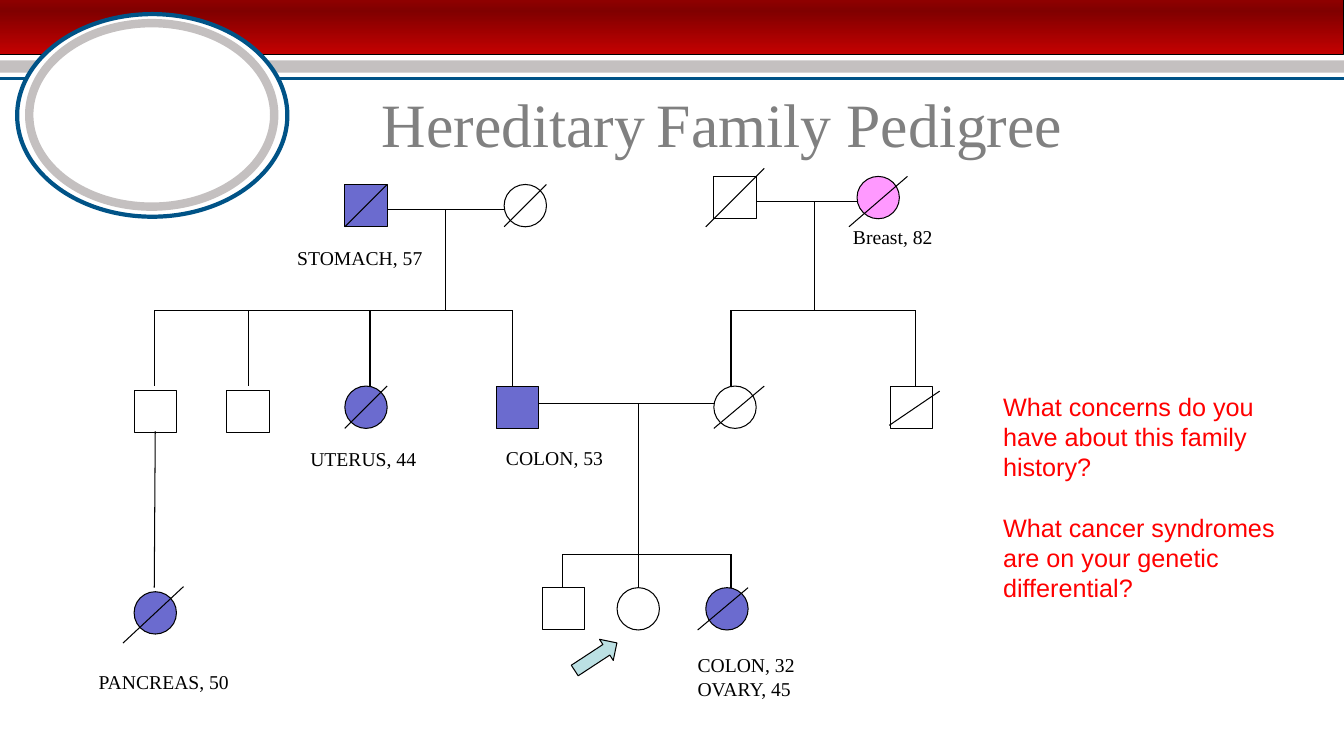
from copy import deepcopy
from itertools import pairwise

from pptx import Presentation
from pptx.dml.color import RGBColor
from pptx.enum.shapes import MSO_CONNECTOR, MSO_SHAPE
from pptx.enum.text import MSO_ANCHOR, PP_ALIGN
from pptx.oxml.ns import qn
from pptx.util import Inches, Pt

RECT = MSO_SHAPE.RECTANGLE
OVAL = MSO_SHAPE.OVAL
ARROW = MSO_SHAPE.RIGHT_ARROW
STRAIGHT = MSO_CONNECTOR.STRAIGHT
TOP = MSO_ANCHOR.TOP
LEFT, CENTER = PP_ALIGN.LEFT, PP_ALIGN.CENTER

SERIF, SANS = "Times New Roman", "Arial"
BLACK, WHITE, RED = "000000", "FFFFFF", "FF0000"
AFFECTED, BREAST = "6B6BCF", "FF99FF"
NAVY, SILVER = "005387", "C4C0C0"
SYMBOL = 0.42

MEMBERS = [
    # shape, left, top, fill, strike, label lines, label box, alignment
    (RECT, 2.42, 0.33, AFFECTED, (0, 0.42, 0.42, 0),
     ["STOMACH, 57"], (-0.57, 0.56, 2, 0.34), LEFT),
    (OVAL, 4, 0.33, None, (0, 0.42, 0.42, 0), [], None, LEFT),
    (RECT, 6.08, 0.25, WHITE, (-0.08, 0.5, 0.5, -0.08), [], None, LEFT),
    (OVAL, 7.5, 0.25, BREAST, (-0.08, 0.5, 0.5, 0),
     ["Breast, 82"], (-0.17, 0.43, 1.05, 0.34), CENTER),
    (RECT, 0.33, 2.37, None, None, [], None, LEFT),
    (RECT, 1.25, 2.37, None, None, [], None, LEFT),
    (OVAL, 2.42, 2.33, AFFECTED, (0, 0.42, 0.42, 0),
     ["UTERUS, 44"], (-0.44, 0.55, 1.43, 0.34), LEFT),
    (RECT, 3.92, 2.33, AFFECTED, None,
     ["COLON, 53"], (0, 0.54, 1.17, 0.34), LEFT),
    (OVAL, 6.08, 2.33, WHITE, (0, 0.42, 0.5, 0), [], None, LEFT),
    (RECT, 7.83, 2.33, None, (-0.01, 0.39, 0.49, 0.05), [], None, LEFT),
    (OVAL, 0.33, 4.37, AFFECTED, (-0.11, 0.51, 0.49, -0.05),
     ["PANCREAS, 50"], (-0.45, 0.73, 1.67, 0.34), LEFT),
    (RECT, 4.38, 4.33, None, None, [], None, LEFT),
    (OVAL, 5.12, 4.33, None, None, [], None, LEFT),
    (OVAL, 6, 4.33, AFFECTED, (-0.08, 0.42, 0.42, 0),
     ["COLON, 32", "OVARY, 45"], (-0.18, 0.6, 1.75, 0.57), LEFT),
]

FAMILIES = [
    ((2.83, 4), 0.58, 3.42, 1.58, (0.53, 1.46, 2.67, 4.08), 2.33),
    ((6.5, 7.5), 0.5, 7.08, 1.58, (6.25, 8.08), 2.33),
    ((4.33, 6.08), 2.5, 5.33, 4, (4.58, 5.33, 6.25), 4.33),
]


def rgb(color):
    return RGBColor.from_string(color)


def add_figure(slide, kind, box, fill, outline=BLACK, weight=0.75):
    figure = slide.shapes.add_shape(kind, *map(Inches, box))
    figure.shadow.inherit = False
    if fill:
        figure.fill.solid()
        figure.fill.fore_color.rgb = rgb(fill)
    else:
        figure.fill.background()
    if outline:
        figure.line.color.rgb = rgb(outline)
        figure.line.width = Pt(weight)
    else:
        figure.line.fill.background()
    return figure


def add_line(slide, x1, y1, x2, y2, color=BLACK, weight=0.75):
    line = slide.shapes.add_connector(STRAIGHT, *map(Inches, (x1, y1, x2, y2)))
    line.line.color.rgb = rgb(color)
    line.line.width = Pt(weight)
    properties = line._element.spPr
    properties.append(properties.makeelement(qn("a:effectLst"), {}))


def add_text(slide, box, lines, size, font, color, align=LEFT, gap=0):
    frame = slide.shapes.add_textbox(*map(Inches, box)).text_frame
    frame.word_wrap = True
    frame.text = "\n".join(lines)
    for index, paragraph in enumerate(frame.paragraphs):
        paragraph.alignment = align
        paragraph.space_before = Pt(gap if index else 0)
        paragraph.font.size = Pt(size)
        paragraph.font.name = font
        paragraph.font.color.rgb = rgb(color)


def add_banner(slide, left, top, width):
    band = add_figure(slide, RECT, (left, top - 0.34, width, 0.88), "C40101")
    band.fill.gradient()
    band.fill.gradient_angle = 270
    stop_list = band._element.spPr.find(qn("a:gradFill")).find(qn("a:gsLst"))
    stop_list.insert(1, deepcopy(stop_list[0]))
    shades = [(0, "C40101"), (0.51, "800000"), (1, "C40101")]
    for stop, (position, shade) in zip(band.fill.gradient_stops, shades):
        stop.position = position
        stop.color.rgb = rgb(shade)
    add_figure(slide, RECT, (left, top + 0.6, width, 0.12), SILVER, None)
    add_line(slide, left, top + 0.78, left + width, top + 0.78, NAVY, 2.25)
    add_figure(slide, OVAL, (left + 0.17, top + 0.14, 2.68, 2.01), WHITE, NAVY, 3)
    add_figure(slide, OVAL, (left + 0.29, top + 0.23, 2.43, 1.82), WHITE, SILVER, 6)


def add_title(slide, left, top, width, height):
    title = slide.shapes.title
    title.left, title.top, title.width, title.height = map(
        Inches, (left, top, width, height))
    frame = title.text_frame
    frame.word_wrap = True
    frame.vertical_anchor = TOP
    heading = frame.paragraphs[0]
    heading.alignment = CENTER
    heading.font.name = SERIF
    heading.font.color.rgb = rgb("808080")
    for words, size in [("Hereditary", 44), (" ", 32), ("Family Pedigree", 44)]:
        run = heading.add_run()
        run.text = words
        run.font.size = Pt(size)


def add_pedigree(slide, left, top):
    def connect(x1, y1, x2, y2):
        add_line(slide, left + x1, top + y1, left + x2, top + y2)

    for (first, second), union, descent, siblings, children, birth in FAMILIES:
        connect(first, union, second, union)
        connect(descent, union, descent, siblings)
        for elder, younger in pairwise(children):
            connect(elder, siblings, younger, siblings)
        for child in children:
            connect(child, siblings, child, birth)
    connect(0.54, 2.78, 0.53, 4.33)

    for kind, x, y, fill, strike, label, label_box, align in MEMBERS:
        add_figure(slide, kind, (left + x, top + y, SYMBOL, SYMBOL), fill)
        if strike:
            x1, y1, x2, y2 = strike
            connect(x + x1, y + y1, x + x2, y + y2)
        if label:
            dx, dy, width, height = label_box
            add_text(slide, (left + x + dx, top + y + dy, width, height),
                     label, 14, SERIF, BLACK, align)

    proband = add_figure(slide, ARROW, (left + 4.66, top + 4.89, 0.5, 0.25), "BBE0E3")
    proband.rotation = 326.8


def add_questions(slide, left, top, width, height):
    questions = [
        "What concerns do you have about this family history?",
        "What cancer syndromes are on your genetic differential?",
    ]
    add_text(slide, (left, top, width, height), questions, 18, SANS, RED, gap=21.5)


def main():
    deck = Presentation()
    deck.slide_width, deck.slide_height = Inches(13.33), Inches(7.5)
    slide = deck.slides.add_slide(deck.slide_layouts[5])
    add_banner(slide, 0, 0, 13.33)
    add_title(slide, 3, 0.8, 8.33, 0.83)
    add_pedigree(slide, 1, 1.5)
    add_questions(slide, 9.85, 3.83, 3.17, 2.52)
    deck.save("out.pptx")


if __name__ == "__main__":
    main()
